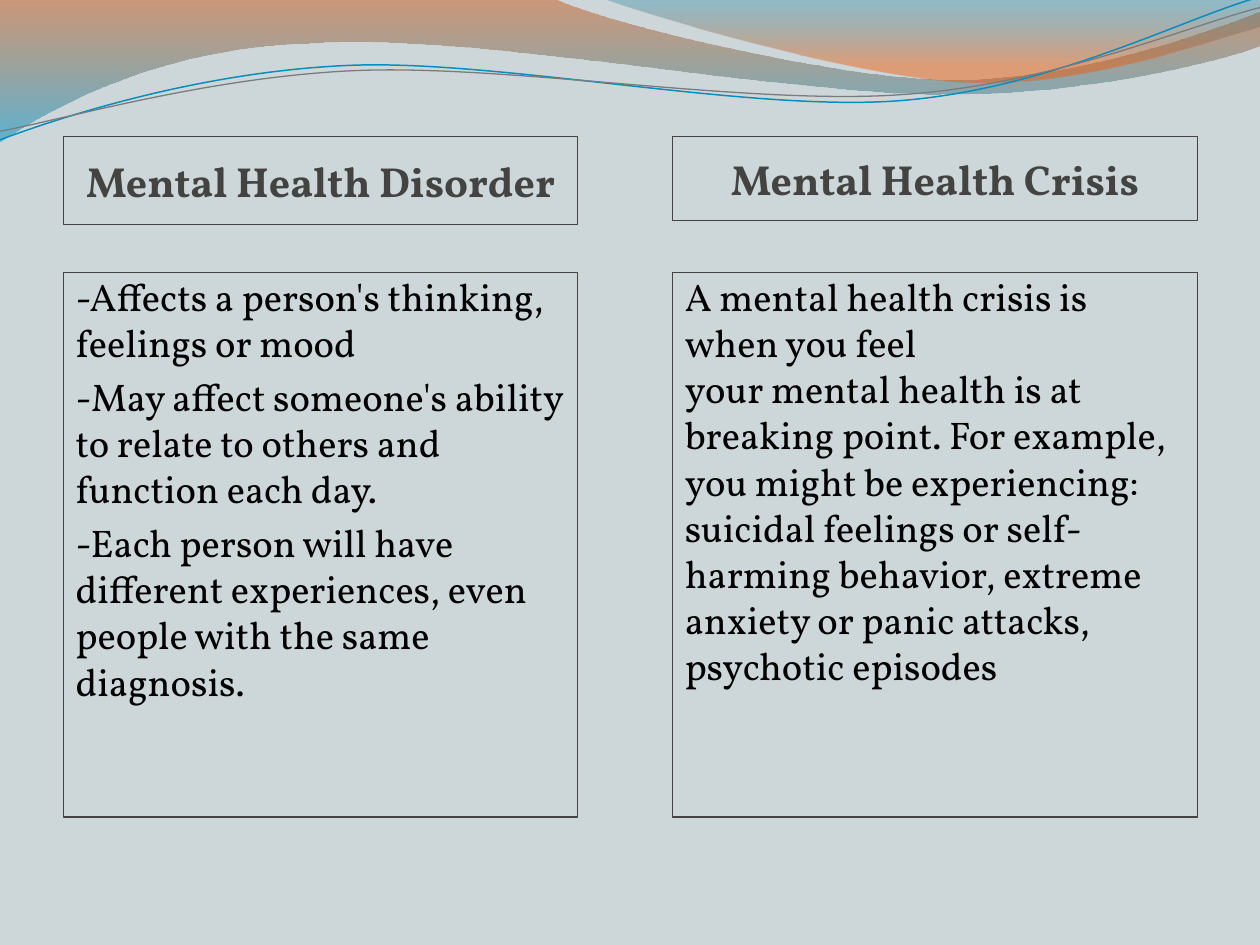
"""Build a slide comparing a mental health disorder with a mental health crisis."""
from pptx import Presentation
from pptx.dml.color import RGBColor
from pptx.enum.shapes import MSO_SHAPE
from pptx.enum.text import MSO_ANCHOR, PP_ALIGN
from pptx.oxml.ns import qn
from pptx.util import Pt
from lxml import etree

RECT = MSO_SHAPE.RECTANGLE
MIDDLE, TOP = MSO_ANCHOR.MIDDLE, MSO_ANCHOR.TOP
CENTER, LEFT = PP_ALIGN.CENTER, PP_ALIGN.LEFT
FONT, GREY, BLACK = "Vollkorn", "434342", "000000"
TIE, HARD = "~", chr(160)

COLUMNS = [
    (36.2, 293.8, 50.4, "Mental Health Disorder", [
        "-Affects a~person's thinking, feelings or mood",
        "-May affect someone's ability to relate to others and function each day.",
        "-Each person will have different experiences, even people with the same diagnosis.",
    ]),
    (384.2, 300, 48, "Mental Health Crisis", [
        "A~mental~health~crisis~is when you feel your~mental~health is at breaking point. "
        "For example, you might be experiencing: suicidal feelings or self-harming behavior, "
        "extreme anxiety or panic attacks, psychotic episodes",
    ]),
]
HEAD_TOP, BODY_TOP, BODY_HIGH = 78, 155.9, 311

WAVES = [
    ([(0, 0), (316.8, -0.7),
      (342.7, 12.2, 478.1, 45.4, 545.8, 45.4), (614.2, 45.4, 689.8, 18.7, 720, 6.5),
      (720.7, 25.9), (707.8, 31.7, 626.4, 54.7, 537.1, 54),
      (447.8, 54, 275, 20.2, 185, 24.5), (92.9, 25.9, 33.1, 59.8, -0.7, 81.4)],
     [(0, "C94A04", 45), (1, "0095CC", 55)]),
    ([(344.9, -0.7), (366.5, 7.9, 491, 44.6, 553.7, 46.8),
      (616.3, 49.7, 691.9, 23, 720, 15.1), (720, 0)],
     [(0, "007AA6", 30), (0.8, "F45700", 45)]),
]
LINES = [
    ([(0, 79.9), (34.6, 67, 113.8, 41, 199.4, 37.4),
      (284.4, 33.8, 427, 64.1, 513.4, 57.6), (599.8, 51.1, 675.4, 10.8, 718.6, -1.4)],
     "078EBF", 0.85),
    ([(0, 74.9), (33.8, 69.1, 118.1, 43.9, 203.8, 40.3),
      (290.2, 36.7, 429.8, 60.5, 516.2, 54), (601.9, 48.2, 677.5, 15.1, 720, 4.3)],
     "797B7E", 0.75),
]


def color(code):
    """Return the colour of a hex string."""
    return RGBColor.from_string(code)


def draw(slide, route, close):
    """Add a freeform along a route, bending the steps that have handles."""
    dots = [tuple(map(Pt, step[-2:])) for step in route]
    pen = slide.shapes.build_freeform(*dots[0])
    pen.add_line_segments(dots[1:], close=close)
    shape = pen.convert_to_shape()
    shape.shadow.inherit = False
    sides = list(shape.element.spPr.iter(qn("a:lnTo")))
    for side, step in zip(sides, route[1:]):
        if len(step) == 2:
            continue
        side.tag = qn("a:cubicBezTo")
        for i in (0, 2):
            spot = etree.Element(qn("a:pt"))
            spot.set("x", str(Pt(step[i]) - shape.left))
            spot.set("y", str(Pt(step[i + 1]) - shape.top))
            side.insert(i // 2, spot)
    return shape


def add_wave(slide, route, stops):
    """Add a filled wave with a see-through gradient."""
    shape = draw(slide, route, True)
    shape.line.fill.background()
    shape.fill.gradient()
    shape.fill.gradient_angle = 270
    for stop, (place, code, _) in zip(shape.fill.gradient_stops, stops):
        stop.position = place
        stop.color.rgb = color(code)
    tints = shape.element.spPr.iter(qn("a:srgbClr"))
    for tint, (_, _, alpha) in zip(tints, stops):
        etree.SubElement(tint, qn("a:alpha")).set("val", str(alpha * 1000))


def outline(shape, code, width):
    """Leave a shape unfilled and set its line."""
    shape.fill.background()
    shape.line.color.rgb = color(code)
    shape.line.width = Pt(width)


def add_box(slide, place, texts, size, code, head):
    """Add an outlined box of text."""
    box = slide.shapes.add_shape(RECT, *map(Pt, place))
    box.shadow.inherit = False
    outline(box, GREY, 0.75)
    frame = box.text_frame
    frame.word_wrap = True
    frame.vertical_anchor = MIDDLE if head else TOP
    frame.margin_left = frame.margin_right = Pt(3.6 if head else 7.2)
    frame.margin_top = 0
    frame.margin_bottom = Pt(0 if head else 3.6)
    for i, text in enumerate(texts):
        para = frame.add_paragraph() if i else frame.paragraphs[0]
        para.text = text.replace(TIE, HARD)
        para.alignment = CENTER if head else LEFT
        para.space_before = Pt(size * 0.2)
        font = para.font
        font.name, font.size, font.bold = FONT, Pt(size), head
        font.color.rgb = color(code)


def main():
    """Build and save the slide."""
    deck = Presentation()
    deck.slide_width, deck.slide_height = Pt(720), Pt(540)
    slide = deck.slides.add_slide(deck.slide_layouts[6])
    slide.background.fill.solid()
    slide.background.fill.fore_color.rgb = color("CDD7D9")
    for route, stops in WAVES:
        add_wave(slide, route, stops)
    for route, code, width in LINES:
        outline(draw(slide, route, False), code, width)
    for left, wide, high, title, texts in COLUMNS:
        add_box(slide, (left, HEAD_TOP, wide, high), [title], 24, GREY, True)
        add_box(slide, (left, BODY_TOP, wide, BODY_HIGH), texts, 22, BLACK, False)
    deck.save("out.pptx")


if __name__ == "__main__":
    main()
